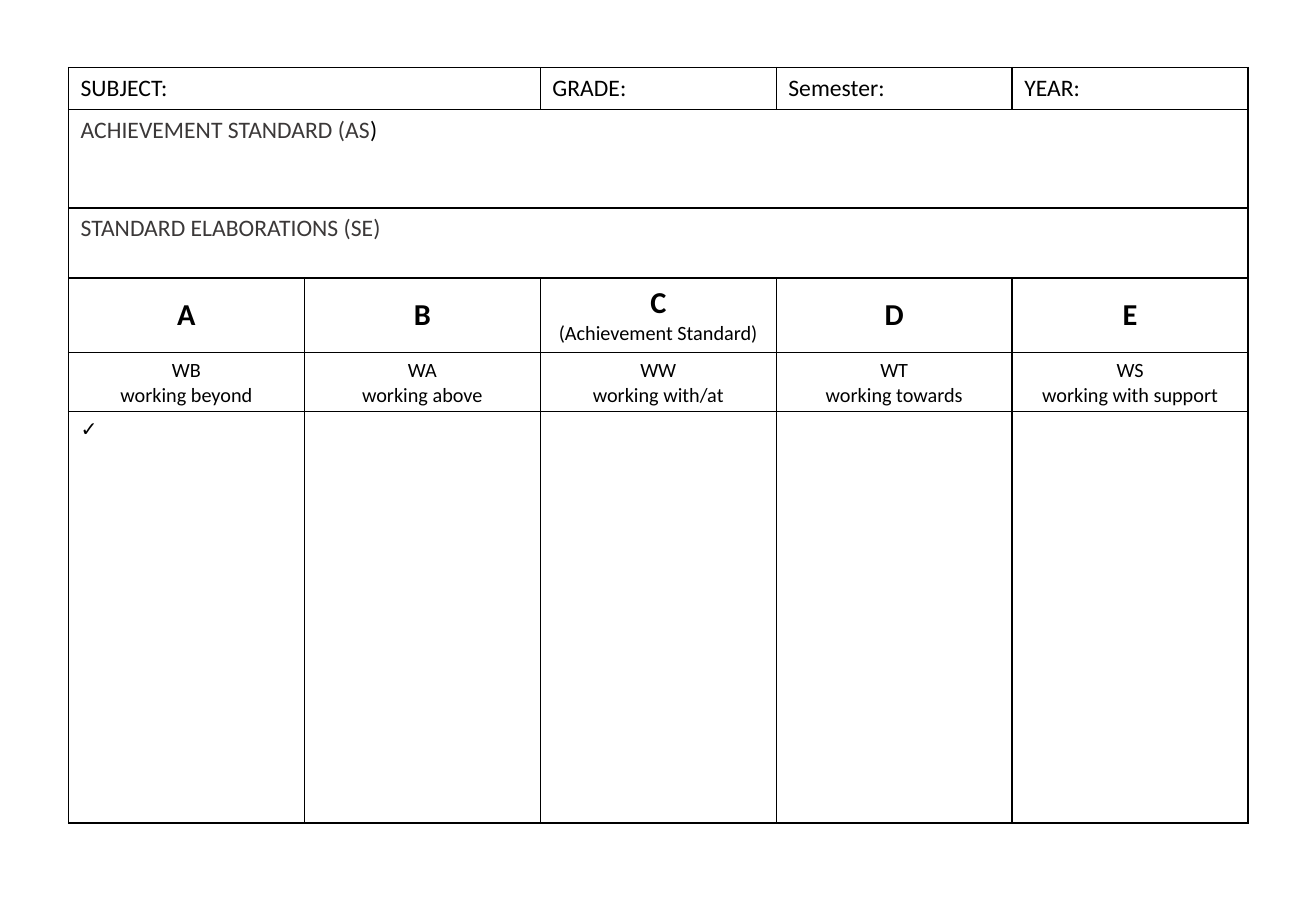
from lxml.etree import SubElement
from pptx import Presentation
from pptx.dml.color import RGBColor
from pptx.enum.text import MSO_ANCHOR as ANCHOR, PP_ALIGN as ALIGN
from pptx.oxml.ns import qn
from pptx.util import Pt

BLACK = RGBColor(0x00, 0x00, 0x00)
GREY = RGBColor(0x3B, 0x38, 0x38)
FONT = "Calibri"

COLUMNS = 5
COLUMN_WIDTH = 139.85
ROW_HEIGHTS = [24.9, 58.4, 41.5, 44.1, 35, 244.1]
HEADINGS = {0: "SUBJECT:", 2: "GRADE:", 3: "Semester:", 4: "YEAR:"}
LEVELS = [
    ("A", "WB", "working beyond"),
    ("B", "WA", "working above"),
    ("C", "WW", "working with/at"),
    ("D", "WT", "working towards"),
    ("E", "WS", "working with support"),
]


def add_text(p, text, size=14, bold=False, color=BLACK, align=ALIGN.LEFT):
    p.alignment = align
    r = p.add_run()
    r.text = text
    r.font.name = FONT
    r.font.size = Pt(size)
    r.font.bold = bold
    r.font.color.rgb = color


def style_cell(cell):
    tc_pr = cell._tc.get_or_add_tcPr()
    for side in ("lnL", "lnR", "lnT", "lnB"):
        ln = SubElement(tc_pr, qn(f"a:{side}"), w=str(Pt(1)))
        fill = SubElement(ln, qn("a:solidFill"))
        SubElement(fill, qn("a:srgbClr"), val=str(BLACK))
    cell.fill.background()


def add_grid(s):
    frame = s.shapes.add_table(
        len(ROW_HEIGHTS), COLUMNS, Pt(40.6), Pt(40),
        Pt(COLUMN_WIDTH * COLUMNS), Pt(sum(ROW_HEIGHTS)))
    table = frame.table
    table.first_row = False
    table.horz_banding = False
    for column in table.columns:
        column.width = Pt(COLUMN_WIDTH)
    for row, height in zip(table.rows, ROW_HEIGHTS):
        row.height = Pt(height)
    for cell in table.iter_cells():
        style_cell(cell)
    table.cell(0, 0).merge(table.cell(0, 1))
    for row in (1, 2):
        table.cell(row, 0).merge(table.cell(row, COLUMNS - 1))
    return table


def fill_level(table, col, grade, code, meaning):
    cell = table.cell(3, col)
    cell.vertical_anchor = ANCHOR.MIDDLE
    tf = cell.text_frame
    add_text(tf.paragraphs[0], grade, size=18, bold=True, align=ALIGN.CENTER)
    if grade == "C":
        add_text(tf.add_paragraph(), "(Achievement Standard)", size=12,
                 align=ALIGN.CENTER)

    cell = table.cell(4, col)
    cell.margin_bottom = 0
    tf = cell.text_frame
    add_text(tf.paragraphs[0], code, size=12, align=ALIGN.CENTER)
    add_text(tf.add_paragraph(), meaning, size=12, align=ALIGN.CENTER)


def main():
    prs = Presentation()
    prs.slide_width, prs.slide_height = Pt(780), Pt(540)
    s = prs.slides.add_slide(prs.slide_layouts[6])
    table = add_grid(s)

    for col, heading in HEADINGS.items():
        add_text(table.cell(0, col).text_frame.paragraphs[0], heading)
    p = table.cell(1, 0).text_frame.paragraphs[0]
    add_text(p, "ACHIEVEMENT STANDARD (AS", color=GREY)
    add_text(p, ")")
    p = table.cell(2, 0).text_frame.paragraphs[0]
    add_text(p, "STANDARD ELABORATIONS (SE)", color=GREY)
    for col, level in enumerate(LEVELS):
        fill_level(table, col, *level)
    add_text(table.cell(5, 0).text_frame.paragraphs[0], "✓", size=12)

    prs.save("out.pptx")


if __name__ == "__main__":
    main()
